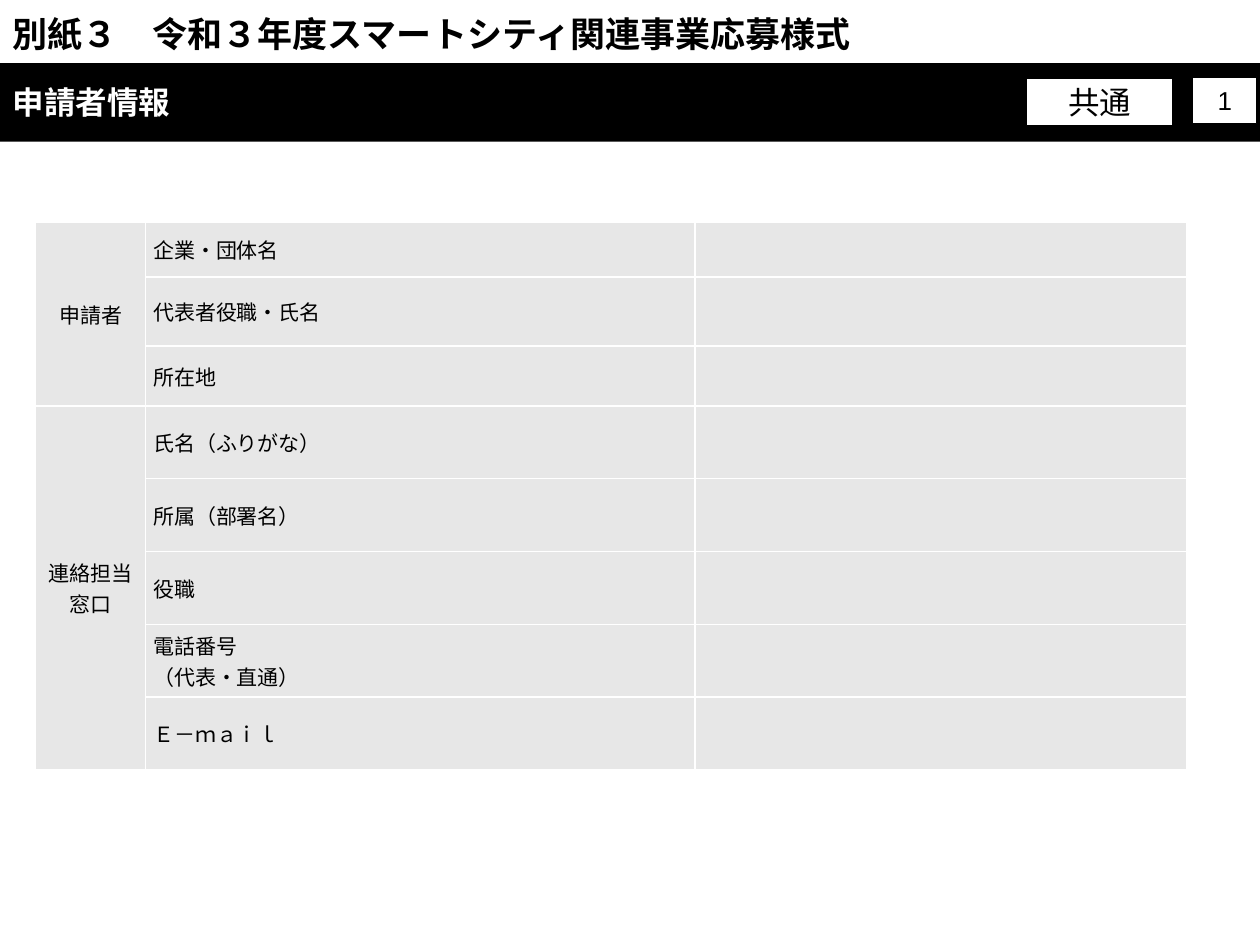
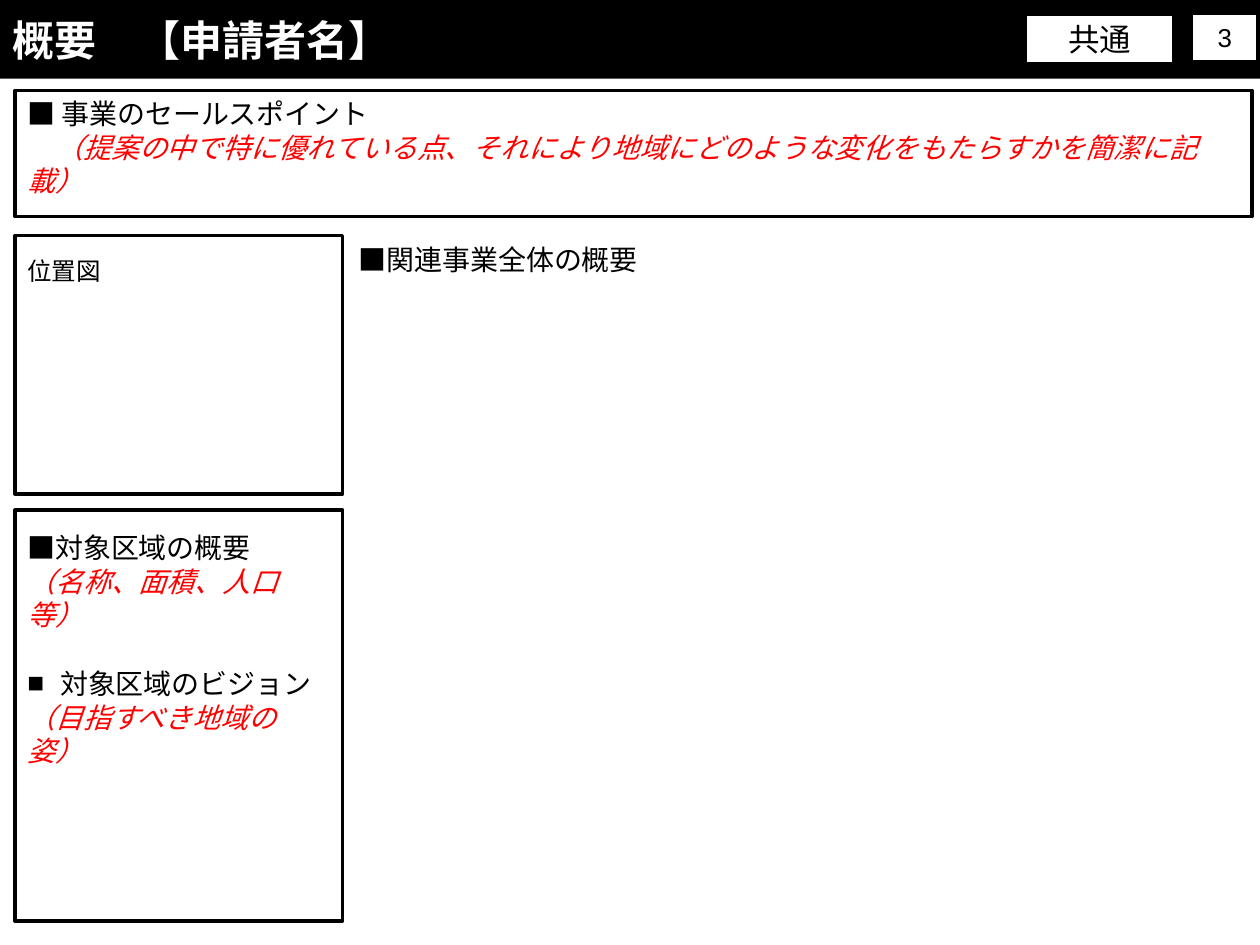
from lxml import etree
from pptx import Presentation
from pptx.dml.color import RGBColor
from pptx.enum.shapes import MSO_SHAPE
from pptx.enum.text import MSO_ANCHOR, MSO_AUTO_SIZE, PP_ALIGN
from pptx.oxml.ns import qn
from pptx.util import Pt

RECT = MSO_SHAPE.RECTANGLE
TOP, MID = MSO_ANCHOR.TOP, MSO_ANCHOR.MIDDLE
LEFT, MIDST, JUST = PP_ALIGN.LEFT, PP_ALIGN.CENTER, PP_ALIGN.JUSTIFY
FIXED = MSO_AUTO_SIZE.NONE
INK = {"black": "000000", "white": "FFFFFF", "red": "FF0000", "gray": "E7E7E7"}
HUE = {name: RGBColor.from_string(code) for name, code in INK.items()}
NOTO, ARIAL, CABIN = "Noto Sans CJK JP", "Arial", "Cabin"


def write(frame, lines, size, face=ARIAL, hue="black", bold=False, align=LEFT, tight=False):
    for spot, line in enumerate(lines):
        para = frame.paragraphs[0] if spot == 0 else frame.add_paragraph()
        para.alignment = align
        if tight:
            para.line_spacing = Pt(size * 1.2)
        note = line.strip().startswith("（") and tight
        run = para.add_run()
        run.text = line
        font = run.font
        font.size, font.name, font.bold, font.italic = Pt(size), face, bold, note
        font.color.rgb = HUE["red" if note else hue]
        east = etree.SubElement(run._r.get_or_add_rPr(), qn("a:ea"))
        east.set("typeface", NOTO)


def box(slide, area, fill=None, width=2):
    shape = slide.shapes.add_shape(RECT, *map(Pt, area))
    shape.shadow.inherit = False
    if fill:
        shape.fill.solid()
        shape.fill.fore_color.rgb = HUE[fill]
    else:
        shape.fill.background()
    shape.line.color.rgb = HUE["black"]
    shape.line.width = Pt(width)
    return shape


deck = Presentation()
deck.slide_width, deck.slide_height = Pt(720), Pt(540)

pages = []
for name, size, top, num in [("申請者情報", 18, 36, "1"), ("概要　【申請者名】", 24, 0, "3")]:
    slide = deck.slides.add_slide(deck.slide_layouts[5])
    pages.append(slide)
    band = slide.shapes.title
    band.left, band.top, band.width, band.height = Pt(0), Pt(top), Pt(720), Pt(45)
    band.fill.solid()
    band.fill.fore_color.rgb = HUE["black"]
    frame = band.text_frame
    frame.auto_size, frame.word_wrap, frame.vertical_anchor = FIXED, True, MID
    write(frame, [name], size, NOTO, "white", True)
    for text, left, high, wide, tall, size in [
        ("共通", 586.8, 8.5, 83.5, 27.4, 18),
        (num, 681.5, 8, 36.7, 26.6, 14.8),
    ]:
        tag = box(slide, (left, top + high, wide, tall), "white", 0.75)
        tag.text_frame.vertical_anchor = MID
        write(tag.text_frame, [text], size, align=MIDST)

first, second = pages

groups = [
    ("申請者", [["企業・団体名"], ["代表者役職・氏名"], ["所在地"]]),
    ("連絡担当窓口", [
        ["氏名（ふりがな）"], ["所属（部署名）"], ["役職"],
        ["電話番号", "（代表・直通）"], ["Ｅ－ｍａｉｌ"],
    ]),
]
wides = [62.8, 313.9, 280.8]
talls = [31, 39.6, 34.2] + [41.6] * 5
grid = first.shapes.add_table(
    len(talls), len(wides), Pt(20.4), Pt(127.2), Pt(sum(wides)), Pt(sum(talls))
).table
grid.first_row = grid.horz_banding = False
for col, wide in zip(grid.columns, wides):
    col.width = Pt(wide)
for row, tall in zip(grid.rows, talls):
    row.height = Pt(tall)
for cell in grid.iter_cells():
    cell.vertical_anchor = MID
    cell.margin_left = cell.margin_right = Pt(4.3)
    cell.margin_top = cell.margin_bottom = Pt(0)
    props = cell._tc.get_or_add_tcPr()
    for side in ("lnL", "lnR", "lnT", "lnB"):
        edge = etree.SubElement(props, qn("a:" + side), w=str(Pt(1)))
        paint = etree.SubElement(edge, qn("a:solidFill"))
        etree.SubElement(paint, qn("a:srgbClr"), val=INK["white"])
    cell.fill.solid()
    cell.fill.fore_color.rgb = HUE["gray"]
start = 0
for group, items in groups:
    head = grid.cell(start, 0)
    head.merge(grid.cell(start + len(items) - 1, 0))
    head._tc.get_or_add_tcPr().set("vert", "eaVert")
    write(head.text_frame, [group], 12, NOTO, align=MIDST)
    for step, lines in enumerate(items):
        write(grid.cell(start + step, 1).text_frame, lines, 12, NOTO, align=JUST)
    start += len(items)

sales = box(second, (8.6, 51.8, 707, 72))
sales.text_frame.vertical_anchor = TOP
write(sales.text_frame, [
    "■ 事業のセールスポイント",
    "　（提案の中で特に優れている点、それにより地域にどのような変化をもたらすかを簡潔に記載）",
], 16, NOTO, tight=True)
box(second, (8.6, 134.6, 187.2, 147.6))
box(second, (8.6, 291.6, 187.2, 234.7))

notes = [
    (first, (0, 3.6, 564, 53), 20, True, ["別紙３　令和３年度スマートシティ関連事業応募様式"]),
    (second, (198, 134.9, 244, 27), 16, False, ["■関連事業全体の概要"]),
    (second, (8.6, 142.8, 176, 25), 14, False, ["位置図"]),
    (second, (8.6, 299.8, 187.2, 148), 16, False, [
        "■対象区域の概要", "（名称、面積、人口等）", "対象区域のビジョン", "（目指すべき地域の姿）",
    ]),
]
for slide, area, size, bold, lines in notes:
    frame = slide.shapes.add_textbox(*map(Pt, area)).text_frame
    frame.word_wrap = True
    write(frame, lines, size, bold=bold, tight=True)

goal = frame.paragraphs[2]
goal.space_before = Pt(20)
goal.runs[0].font.name = CABIN
props = goal._p.get_or_add_pPr()
props.set("marL", str(Pt(18.7)))
props.set("indent", str(Pt(-18.7)))
etree.SubElement(props, qn("a:buFont"), typeface=ARIAL)
etree.SubElement(props, qn("a:buChar"), char="■")

deck.save("out.pptx")
